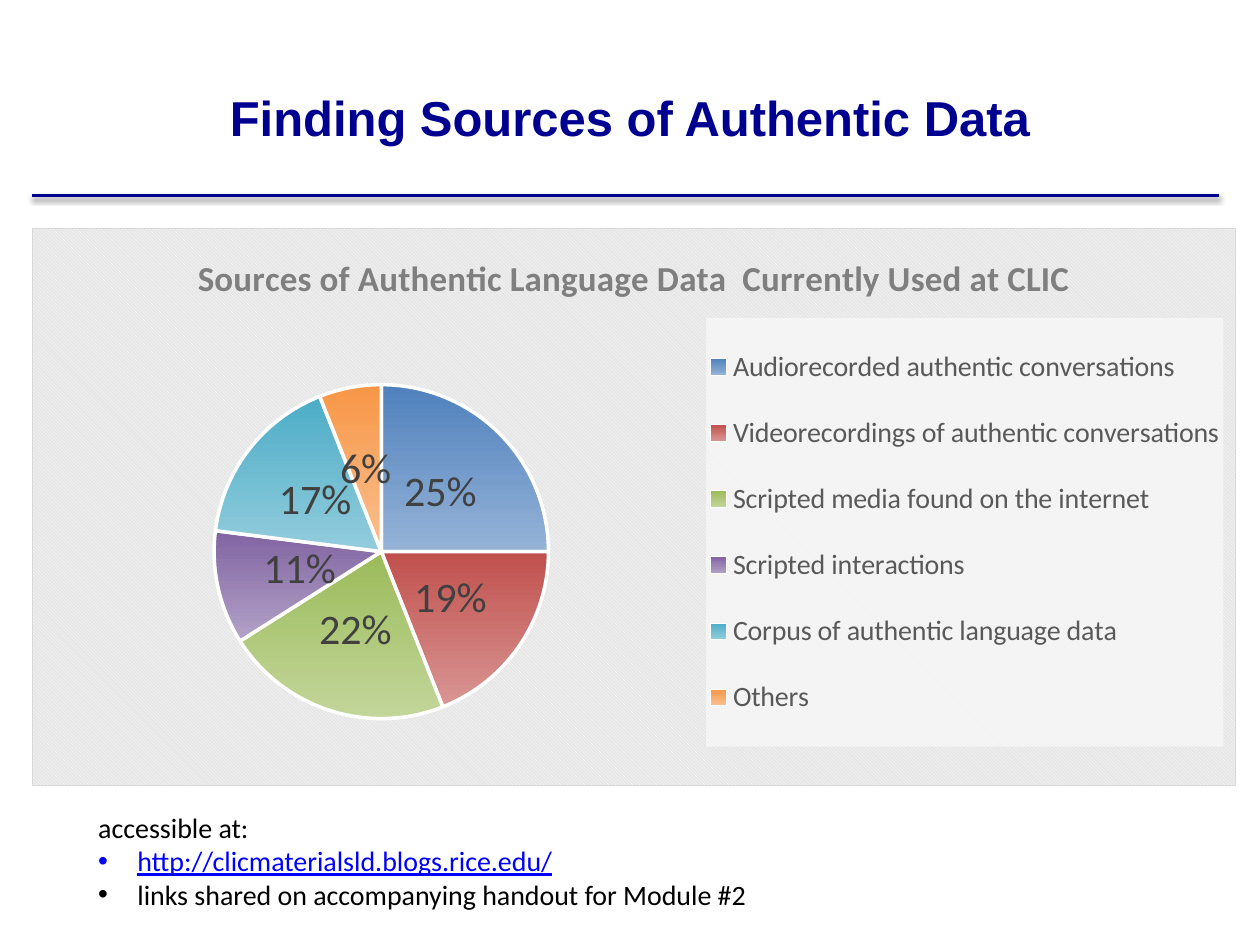
import pptx
import pptx.chart.data
import pptx.dml.color
import pptx.enum.chart
import pptx.enum.shapes
import pptx.enum.text
import pptx.oxml
import pptx.oxml.ns
import pptx.util

Cm = pptx.util.Cm
Pt = pptx.util.Pt
RGBColor = pptx.dml.color.RGBColor
qn = pptx.oxml.ns.qn

NAVY = RGBColor(0x00, 0x00, 0x90)
BLACK = RGBColor(0x00, 0x00, 0x00)
WHITE = RGBColor(0xFF, 0xFF, 0xFF)
LINK_BLUE = RGBColor(0x00, 0x00, 0xFF)
TITLE_GRAY = RGBColor(0x7F, 0x7F, 0x7F)
LEGEND_GRAY = RGBColor(0x59, 0x59, 0x59)
LABEL_GRAY = RGBColor(0x40, 0x40, 0x40)

CHART_TITLE = "Sources of Authentic Language Data  Currently Used at CLIC"
SOURCES = [
    ("Audiorecorded authentic conversations", 25, RGBColor(0x4F, 0x81, 0xBD), RGBColor(0x95, 0xB3, 0xD7)),
    ("Videorecordings of authentic conversations", 19, RGBColor(0xC0, 0x50, 0x4D), RGBColor(0xD9, 0x96, 0x94)),
    ("Scripted media found on the internet", 22, RGBColor(0x9B, 0xBB, 0x59), RGBColor(0xC3, 0xD6, 0x9B)),
    ("Scripted interactions", 11, RGBColor(0x80, 0x64, 0xA2), RGBColor(0xB3, 0xA2, 0xC7)),
    ("Corpus of authentic language data", 17, RGBColor(0x4B, 0xAC, 0xC6), RGBColor(0x93, 0xCD, 0xDD)),
    ("Others", 6, RGBColor(0xF7, 0x96, 0x46), RGBColor(0xFA, 0xC0, 0x90)),
]


def xml(tag, body="", attributes=""):
    """Return a parsed chart or drawing element."""
    spaces = pptx.oxml.ns.nsdecls("a", "c")
    return pptx.oxml.parse_xml(f"<{tag} {spaces} {attributes}>{body}</{tag}>")


def style(font, size, color, name="Calibri", bold=False):
    """Set the look of a font."""
    font.name, font.size, font.bold = name, Pt(size), bold
    font.color.rgb = color


def manual_layout(x, y, width, height, inner=False):
    """Return a layout given in fractions of the chart."""
    target = '<c:layoutTarget val="inner"/>' if inner else ""
    modes = '<c:xMode val="edge"/><c:yMode val="edge"/>'
    sizes = f'<c:x val="{x}"/><c:y val="{y}"/><c:w val="{width}"/><c:h val="{height}"/>'
    return xml("c:layout", f"<c:manualLayout>{target}{modes}{sizes}</c:manualLayout>")


def drop_layout(element):
    """Remove an automatic layout from a chart part."""
    for layout in element.findall(qn("c:layout")):
        element.remove(layout)


def add_heading(page, left, top, width, height):
    """Place the slide title with the shadowed rule along its lower edge."""
    box = page.shapes.add_textbox(left, top, width, height)
    frame = box.text_frame
    frame.word_wrap = True
    frame.vertical_anchor = pptx.enum.text.MSO_ANCHOR.MIDDLE
    frame.text = "Finding Sources of Authentic Data"
    para = frame.paragraphs[0]
    para.alignment = pptx.enum.text.PP_ALIGN.CENTER
    style(para.runs[0].font, 28, NAVY, "Arial", True)

    start, base = left - Cm(0.63), top + height
    rule = page.shapes.add_connector(
        pptx.enum.shapes.MSO_CONNECTOR.STRAIGHT, start, base, start + Cm(23.93), base)
    rule.line.color.rgb = NAVY
    rule.line.width = Pt(2)
    shade = '<a:srgbClr val="000000"><a:alpha val="38000"/></a:srgbClr>'
    rule._element.spPr.append(xml(
        "a:effectLst",
        f'<a:outerShdw blurRad="{Pt(3.1)}" dist="{Pt(1.6)}" dir="5400000">{shade}</a:outerShdw>'))


def add_source_chart(page, left, top, width, height):
    """Place the pie of data sources with its title and legend."""
    data = pptx.chart.data.CategoryChartData()
    data.categories = [source[0] for source in SOURCES]
    data.add_series(CHART_TITLE, [source[1] for source in SOURCES])
    chart = page.shapes.add_chart(
        pptx.enum.chart.XL_CHART_TYPE.PIE, left, top, width, height, data).chart
    style(chart.font, 10, BLACK)
    chart.has_title = True
    chart.chart_title.include_in_layout = False
    chart.chart_title.text_frame.text = CHART_TITLE
    style(chart.chart_title.text_frame.paragraphs[0].runs[0].font, 20, TITLE_GRAY, bold=True)

    pie = chart.plots[0]
    pie.vary_by_categories = True
    for index, (_, _, dark, light) in enumerate(SOURCES):
        look = pie.series[0].points[index].format
        look.fill.gradient()
        look.fill.gradient_angle = 270
        for stop, color in zip(look.fill.gradient_stops, (dark, light)):
            stop.color.rgb = color
        look.line.color.rgb = WHITE
        look.line.width = Pt(2)

    pie.has_data_labels = True
    labels = pie.data_labels
    labels.show_percentage, labels.show_value = True, False
    labels.number_format, labels.number_format_is_linked = "0%", False
    labels.position = pptx.enum.chart.XL_LABEL_POSITION.CENTER
    style(labels.font, 24, LABEL_GRAY)

    chart.has_legend = True
    legend = chart.legend
    legend.position = pptx.enum.chart.XL_LEGEND_POSITION.RIGHT
    legend.include_in_layout = False
    style(legend.font, 16, LEGEND_GRAY)
    part = legend._element
    drop_layout(part)
    part.find(qn("c:legendPos")).addnext(manual_layout(0.56, 0.16, 0.43, 0.77))
    part.find(qn("c:txPr")).addprevious(xml(
        "c:spPr",
        '<a:solidFill><a:srgbClr val="FFFFFF"><a:alpha val="50000"/></a:srgbClr></a:solidFill>'))

    body = chart._chartSpace.find(qn("c:chart"))
    area = body.find(qn("c:plotArea"))
    drop_layout(area)
    area.insert(0, manual_layout(0.15, 0.28, 0.28, 0.6, inner=True))
    body.addnext(xml(
        "c:spPr",
        '<a:pattFill prst="dkDnDiag"><a:fgClr><a:srgbClr val="FFFFFF"/></a:fgClr>'
        '<a:bgClr><a:srgbClr val="E6E6E6"/></a:bgClr></a:pattFill>'
        f'<a:ln w="{Pt(0.75)}"><a:solidFill><a:srgbClr val="D9D9D9"/></a:solidFill></a:ln>'))


def add_access_notes(page, left, top, width, height):
    """Place the list of where the sources can be found."""
    frame = page.shapes.add_textbox(left, top, width, height).text_frame
    frame.word_wrap = True
    lines = [
        ("accessible at:", BLACK, False),
        ("http://clicmaterialsld.blogs.rice.edu/", LINK_BLUE, True),
        ("links shared on accompanying handout for Module #2", BLACK, True),
    ]
    for index, (words, color, bulleted) in enumerate(lines):
        para = frame.paragraphs[0] if index == 0 else frame.add_paragraph()
        para.text = words
        if bulleted:
            properties = para._p.get_or_add_pPr()
            properties.set("marL", str(Cm(0.79)))
            properties.set("indent", str(-Cm(0.79)))
            properties.append(xml("a:buFont", attributes='typeface="Arial"'))
            properties.append(xml("a:buChar", attributes='char="•"'))
        span = para.runs[0]
        style(span.font, 16, color)
        span.font.underline = color == LINK_BLUE


def main():
    """Build and save the deck."""
    deck = pptx.Presentation()
    deck.slide_width, deck.slide_height = Cm(25.4), Cm(19.05)
    page = deck.slides.add_slide(deck.slide_layouts[6])
    add_heading(page, Cm(1.27), Cm(0.76), Cm(22.86), Cm(3.18))
    add_source_chart(page, Cm(0.64), Cm(4.6), Cm(24.28), Cm(11.25))
    add_access_notes(page, Cm(1.73), Cm(16.21), Cm(16.79), Cm(2.39))
    deck.save("out.pptx")


if __name__ == "__main__":
    main()
